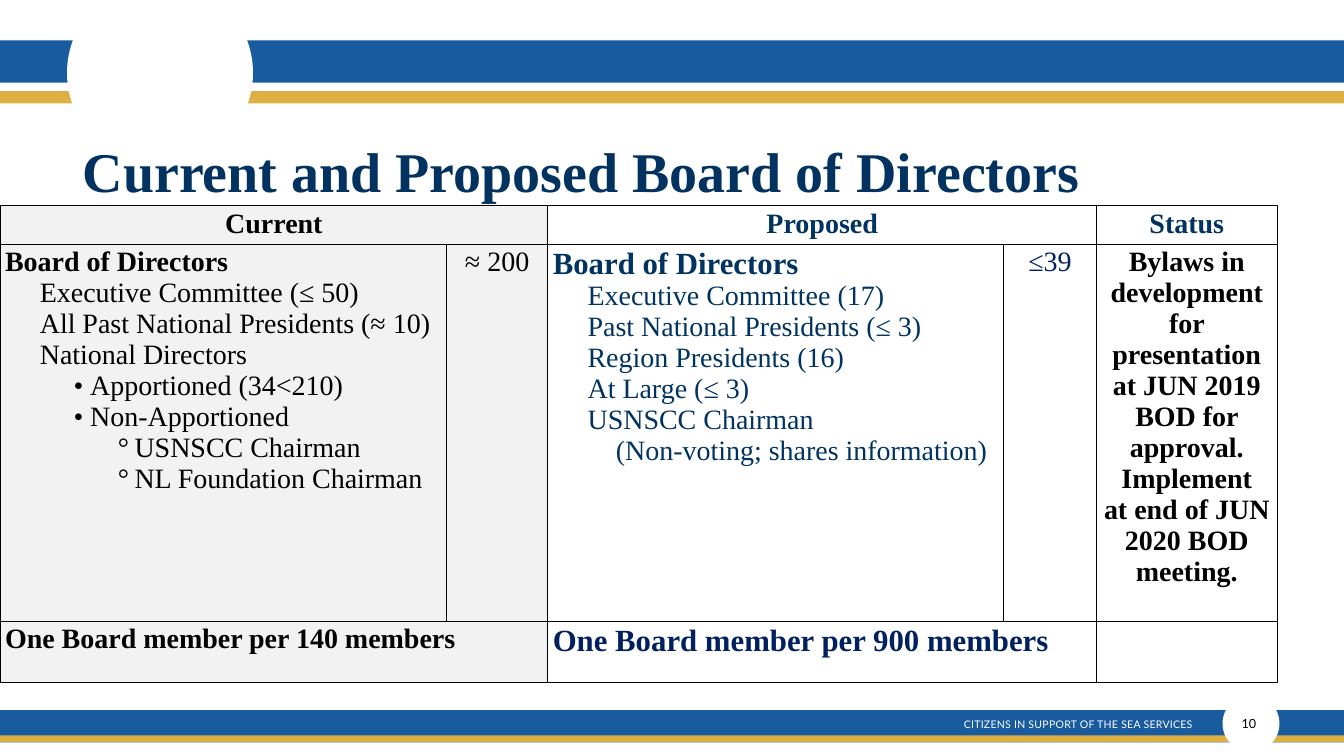
from lxml.etree import SubElement
from pptx import Presentation
from pptx.dml.color import RGBColor
from pptx.enum.shapes import MSO_SHAPE
from pptx.enum.text import MSO_ANCHOR, MSO_AUTO_SIZE, PP_ALIGN
from pptx.oxml.ns import qn
from pptx.util import Inches, Pt

BLUE, GOLD, WHITE, BLACK = "185B9E", "DDB043", "FFFFFF", "000000"
GREY, TITLE_NAVY, NAVY, DEEP_NAVY = "F2F2F2", "013260", "013360", "002060"
SERIF, SANS = "Times New Roman", "Lato"
INDENT, SUB_INDENT, NOTE_INDENT = 0.69, 1.69, 1.25
CHAIR_INDENT = 2.57


def rgb(color):
    return RGBColor.from_string(color)


def style(p, size, color, font=SERIF, bold=False, align=PP_ALIGN.LEFT):
    p.alignment = align
    for r in p.runs:
        r.font.size = Pt(size)
        r.font.name = font
        r.font.bold = bold
        r.font.color.rgb = rgb(color)


def add_block(s, kind, left, top, width, height, color):
    sp = s.shapes.add_shape(kind, Inches(left), Inches(top), Inches(width), Inches(height))
    sp.shadow.inherit = False
    sp.fill.solid()
    sp.fill.fore_color.rgb = rgb(color)
    sp.line.fill.background()


def add_label(s, text, left, top, width, height, size, color, inset, right, wrap):
    tb = s.shapes.add_textbox(Inches(left), Inches(top), Inches(width), Inches(height))
    tf = tb.text_frame
    tf.word_wrap = wrap
    tf.vertical_anchor = MSO_ANCHOR.MIDDLE
    tf.margin_left = tf.margin_top = tf.margin_bottom = Inches(inset)
    tf.margin_right = Inches(right)
    p = tf.paragraphs[0]
    p.text = text
    style(p, size, color, SANS, align=PP_ALIGN.RIGHT)
    return p


def add_title(s, text):
    title = s.shapes.title
    title.left, title.top = Inches(1.64), Inches(2.71)
    title.width, title.height = Inches(23.52), Inches(1.98)
    tf = title.text_frame
    tf.text = text
    tf.auto_size = MSO_AUTO_SIZE.NONE
    tf.vertical_anchor = MSO_ANCHOR.TOP
    tf.margin_left = tf.margin_top = tf.margin_right = tf.margin_bottom = 0
    style(tf.paragraphs[0], 80, TITLE_NAVY, bold=True)


def indent(p, left, bullet=None):
    pPr = p._p.get_or_add_pPr()
    pPr.set("marL", str(Inches(left)))
    if bullet:
        pPr.set("indent", str(-Inches(0.33)))
        SubElement(pPr, qn("a:buFont"), typeface=SERIF)
        SubElement(pPr, qn("a:buChar"), char=bullet)


def format_cell(cell, fill):
    tcPr = cell._tc.get_or_add_tcPr()
    for side in ("a:lnL", "a:lnR", "a:lnT", "a:lnB"):
        ln = SubElement(tcPr, qn(side), w=str(Pt(1)))
        SubElement(SubElement(ln, qn("a:solidFill")), qn("a:srgbClr"), val=BLACK)
    cell.fill.solid()
    cell.fill.fore_color.rgb = rgb(fill)


def fill_cell(cell, lines, color, size=40, bold=False, align=PP_ALIGN.LEFT):
    tf = cell.text_frame
    tf.text = "\n".join(lines)
    for p in tf.paragraphs:
        style(p, size, color, bold=bold, align=align)


def fill_board(cell, members, color, heading_size):
    fill_cell(cell, ["Board of Directors"] + [m[0] for m in members], color)
    heading, *rest = cell.text_frame.paragraphs
    style(heading, heading_size, color, bold=True)
    for p, (_, *layout) in zip(rest, members):
        indent(p, *layout)


def add_board_table(s):
    cols, rows = [8.86, 2.01, 9.04, 1.85, 3.58], [0.77, 7.48, 1.21]
    frame = s.shapes.add_table(len(rows), len(cols), 0, Inches(4.08),
                               Inches(sum(cols)), Inches(sum(rows)))
    table = frame.table
    table.first_row = table.horz_banding = False
    for col, width in zip(table.columns, cols):
        col.width = Inches(width)
    for row, height in zip(table.rows, rows):
        row.height = Inches(height)
        for c, cell in enumerate(row.cells):
            format_cell(cell, GREY if c < 2 else WHITE)
    for r in (0, 2):
        for c in (0, 2):
            table.cell(r, c).merge(table.cell(r, c + 1))

    center = PP_ALIGN.CENTER
    for c, text, color in ((0, "Current", BLACK), (2, "Proposed", NAVY), (4, "Status", NAVY)):
        fill_cell(table.cell(0, c), [text], color, bold=True, align=center)
    fill_board(table.cell(1, 0), [
        ("Executive Committee (≤ 50)", INDENT),
        ("All Past National Presidents (≈ 10)", INDENT),
        ("National Directors", INDENT),
        ("Apportioned (34<210)", SUB_INDENT, "•"),
        ("Non-Apportioned", SUB_INDENT, "•"),
        ("USNSCC Chairman", CHAIR_INDENT, "°"),
        ("NL Foundation Chairman", CHAIR_INDENT, "°"),
    ], BLACK, 40)
    fill_cell(table.cell(1, 1), ["≈ 200"], BLACK, align=center)
    fill_board(table.cell(1, 2), [
        ("Executive Committee (17)", INDENT),
        ("Past National Presidents (≤ 3)", INDENT),
        ("Region Presidents (16)", INDENT),
        ("At Large (≤ 3)", INDENT),
        ("USNSCC Chairman", INDENT),
        ("(Non-voting; shares information)", NOTE_INDENT),
    ], NAVY, 44)
    fill_cell(table.cell(1, 3), ["≤39"], DEEP_NAVY, align=center)
    fill_cell(table.cell(1, 4), [
        "Bylaws in development for presentation at JUN 2019 BOD for approval. Implement",
        "at end of JUN 2020 BOD meeting.",
    ], BLACK, bold=True, align=center)
    fill_cell(table.cell(2, 0), ["One Board member per 140 members"], BLACK, bold=True)
    fill_cell(table.cell(2, 2), ["One Board member per 900 members"], DEEP_NAVY, 44, bold=True)


def add_bands(s):
    rect, oval = MSO_SHAPE.RECTANGLE, MSO_SHAPE.OVAL
    add_block(s, rect, -0.2, 0.8, 27.08, 0.84, BLUE)
    add_block(s, rect, -0.2, 1.81, 27.08, 0.24, GOLD)
    add_block(s, oval, 1.33, -0.4, 3.69, 3.69, WHITE)
    add_block(s, rect, -0.1, 14.09, 27.08, 0.64, BLUE)
    add_block(s, rect, -0.1, 14.59, 27.08, 0.13, GOLD)
    add_block(s, oval, 24.26, 13.79, 1.13, 1.13, WHITE)


def main():
    prs = Presentation()
    prs.slide_width, prs.slide_height = Inches(26.67), Inches(15)
    s = prs.slides.add_slide(prs.slide_layouts[5])
    add_bands(s)
    motto = add_label(s, "CITIZENS IN SUPPORT OF THE SEA SERVICES",
                      17.34, 14.18, 6.67, 0.35, 15, WHITE, 0.04, 0.34, True)
    motto.line_spacing = 1.2
    motto.runs[0]._r.get_or_add_rPr().set("spc", "40")
    add_title(s, "Current and Proposed Board of Directors")
    add_label(s, "10", 24.58, 14.15, 0.4, 0.41, 18, BLACK, 0.05, 0.05, False)
    add_board_table(s)
    prs.save("out.pptx")


if __name__ == "__main__":
    main()
